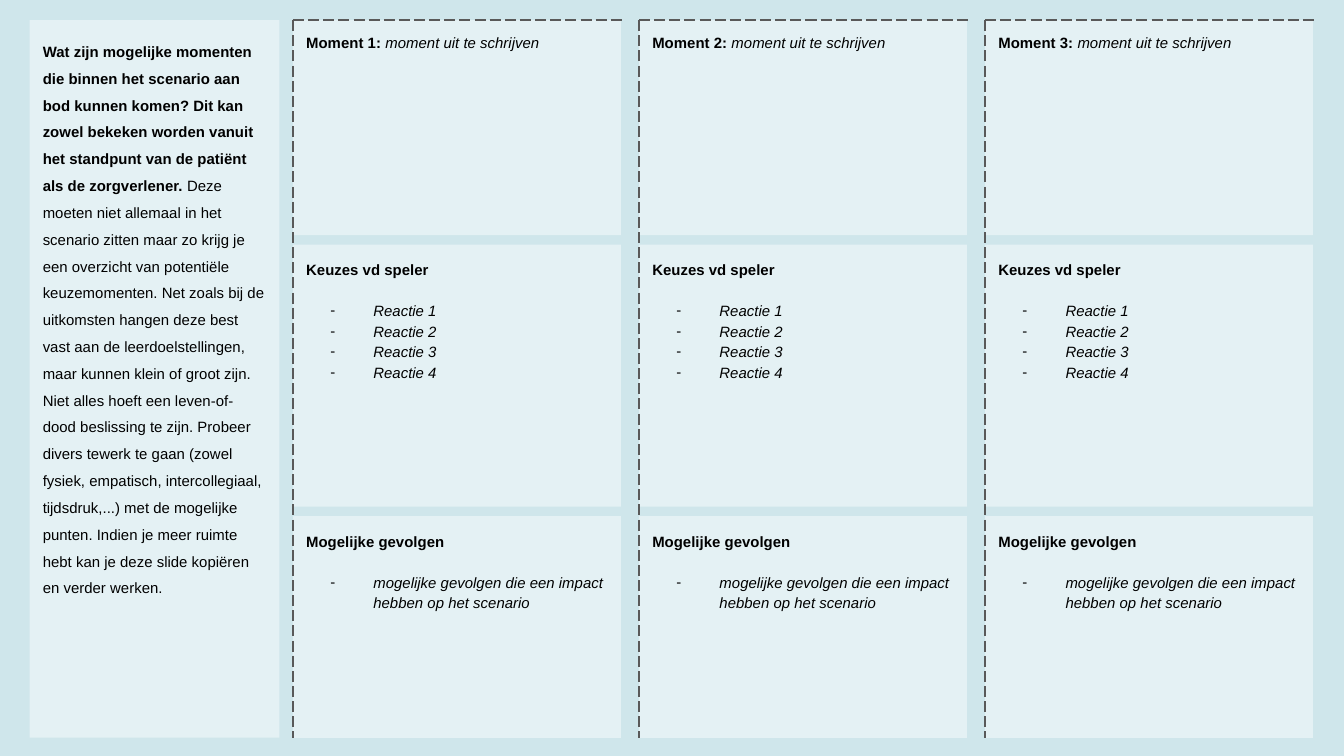
import pptx
import pptx.util
import pptx.dml.color
import pptx.enum.dml
import pptx.enum.shapes
import pptx.enum.text
import pptx.oxml.ns
from lxml import etree

Inches, Pt = pptx.util.Inches, pptx.util.Pt
qn = pptx.oxml.ns.qn

# Content
INTRO = [
    ("Wat zijn mogelijke momenten die binnen het scenario aan bod kunnen komen? "
     "Dit kan zowel bekeken worden vanuit het standpunt van de patiënt als de "
     "zorgverlener. ", "bold"),
    ("Deze moeten niet allemaal in het scenario zitten maar zo krijg je een "
     "overzicht van potentiële keuzemomenten. Net zoals bij de uitkomsten hangen "
     "deze best vast aan de leerdoelstellingen, maar kunnen klein of groot zijn. "
     "Niet alles hoeft een leven-of-dood beslissing te zijn. Probeer divers tewerk "
     "te gaan (zowel fysiek, empatisch, intercollegiaal, tijdsdruk,...) met de "
     "mogelijke punten. Indien je meer ruimte hebt kan je deze slide kopiëren en "
     "verder werken.", "plain"),
]
MOMENTS = ["Moment 1: ", "Moment 2: ", "Moment 3: "]
MOMENT_HINT = "moment uit te schrijven"
LISTS = [
    ("Keuzes vd speler", ["Reactie 1", "Reactie 2", "Reactie 3", "Reactie 4"]),
    ("Mogelijke gevolgen",
     ["mogelijke gevolgen die een impact hebben op het scenario"]),
]

# Layout in inches, on a 16:9 slide
SLIDE_WIDTH = 10
SLIDE_HEIGHT = SLIDE_WIDTH * 9 / 16
TOP, BOTTOM = 0.15, 5.49
INTRO_LEFT, INTRO_WIDTH = 0.22, 1.86
FIRST_COLUMN, LAST_COLUMN, COLUMN_WIDTH = 2.18, 7.33, 2.44
COLUMN_STEP = (LAST_COLUMN - FIRST_COLUMN) / (len(MOMENTS) - 1)
ROW_GAP = 0.07
ROW_HEIGHTS = [1.6, 1.95, 1.65]
TEXT_SIZE = 8


def color(hex_code):
    return pptx.dml.color.RGBColor.from_string(hex_code)


def add_panel(left, top, width, height):
    """Add a translucent white box and return its text frame."""
    panel = slide.shapes.add_shape(
        pptx.enum.shapes.MSO_SHAPE.RECTANGLE,
        Inches(left), Inches(top), Inches(width), Inches(height))
    panel.shadow.inherit = False
    panel.line.fill.background()
    panel.fill.solid()
    panel.fill.fore_color.rgb = color("FFFFFF")
    white = panel.fill._xPr.find(".//" + qn("a:srgbClr"))
    etree.SubElement(white, qn("a:alpha"), val="45000")
    frame = panel.text_frame
    frame.word_wrap = True
    frame.vertical_anchor = pptx.enum.text.MSO_ANCHOR.TOP
    frame.margin_left = frame.margin_right = Inches(0.1)
    frame.margin_top = frame.margin_bottom = Inches(0.1)
    return frame


def write(paragraph, runs, spacing=1.0, after=0):
    paragraph.alignment = pptx.enum.text.PP_ALIGN.LEFT
    paragraph.line_spacing = spacing
    paragraph.space_after = Pt(after)
    for text, style in runs:
        run = paragraph.add_run()
        run.text = text
        run.font.name = "Arial"
        run.font.size = Pt(TEXT_SIZE)
        run.font.color.rgb = color("000000")
        run.font.bold = style == "bold"
        run.font.italic = style == "italic"


def add_dash_bullet(paragraph):
    properties = paragraph._p.get_or_add_pPr()
    properties.set("marL", str(Inches(0.5)))
    properties.set("indent", str(Inches(-0.32)))
    bullet_color = etree.SubElement(properties, qn("a:buClr"))
    etree.SubElement(bullet_color, qn("a:srgbClr"), val="000000")
    etree.SubElement(properties, qn("a:buSzPts"), val=str(TEXT_SIZE * 100))
    etree.SubElement(properties, qn("a:buFont"), typeface="Arial")
    etree.SubElement(properties, qn("a:buChar"), char="-")


def add_dashed_line(x1, y1, x2, y2):
    border = slide.shapes.add_connector(
        pptx.enum.shapes.MSO_CONNECTOR.STRAIGHT,
        Inches(x1), Inches(y1), Inches(x2), Inches(y2))
    border.line.color.rgb = color("595959")
    border.line.width = Pt(0.75)
    border.line.dash_style = pptx.enum.dml.MSO_LINE.LONG_DASH
    etree.SubElement(border._element.spPr, qn("a:effectLst"))


presentation = pptx.Presentation()
presentation.slide_width = Inches(SLIDE_WIDTH)
presentation.slide_height = Inches(SLIDE_HEIGHT)
slide = presentation.slides.add_slide(presentation.slide_layouts[6])
slide.background.fill.solid()
slide.background.fill.fore_color.rgb = color("CFE6EB")

# Introduction
intro = add_panel(INTRO_LEFT, TOP, INTRO_WIDTH, BOTTOM - TOP)
write(intro.paragraphs[0], INTRO, spacing=1.5, after=12)

# One column per moment
row_tops = [TOP + sum(ROW_HEIGHTS[:row]) + row * ROW_GAP
            for row in range(len(ROW_HEIGHTS))]
for column, moment in enumerate(MOMENTS):
    left = FIRST_COLUMN + column * COLUMN_STEP
    frames = [add_panel(left, top, COLUMN_WIDTH, height)
              for top, height in zip(row_tops, ROW_HEIGHTS)]

    write(frames[0].paragraphs[0], [(moment, "bold"), (MOMENT_HINT, "italic")])
    for frame, (heading, items) in zip(frames[1:], LISTS):
        write(frame.paragraphs[0], [(heading, "bold")], spacing=1.15, after=11)
        for item in items:
            paragraph = frame.add_paragraph()
            write(paragraph, [(item, "italic")], spacing=1.15)
            add_dash_bullet(paragraph)

    # Dashed left and top borders
    add_dashed_line(left, TOP, left, BOTTOM)
    add_dashed_line(left, TOP, left + COLUMN_WIDTH + 0.01, TOP)

presentation.save("out.pptx")
